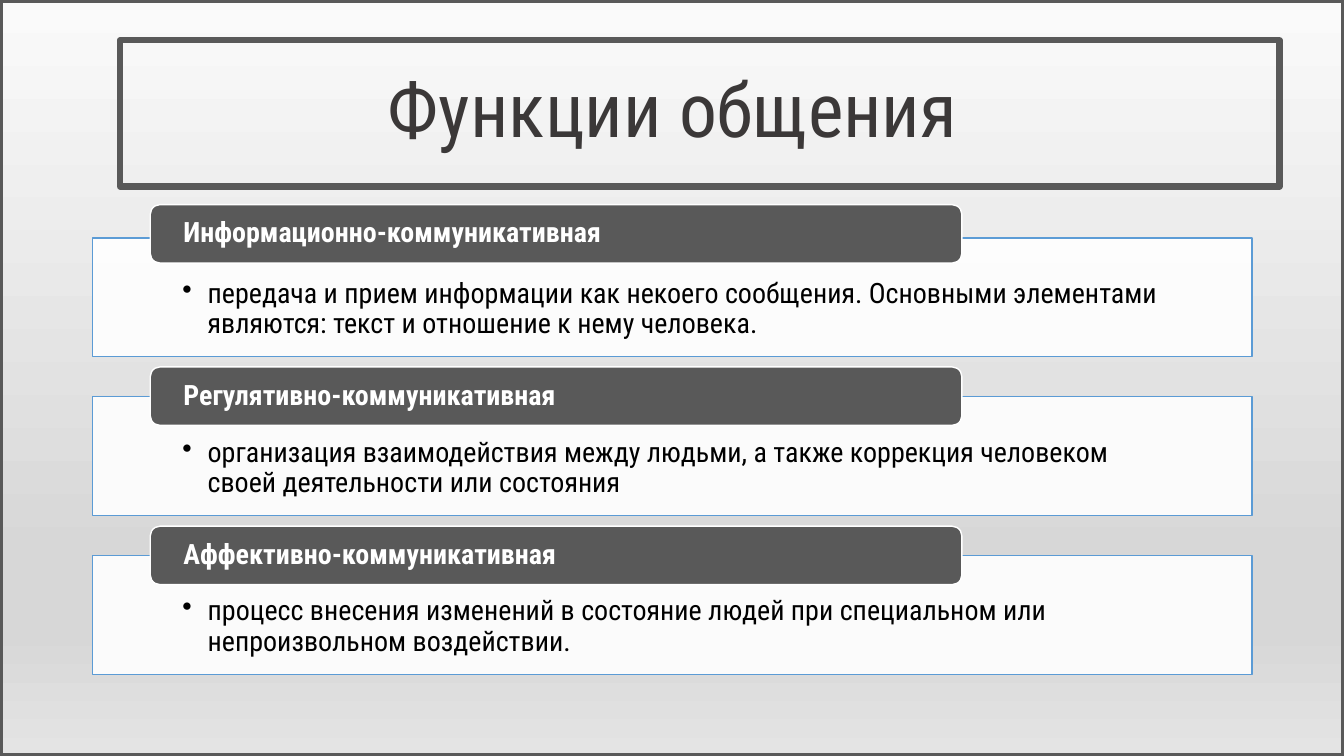
import pptx
import pptx.util
import pptx.dml.color
import pptx.enum.shapes
import pptx.enum.text
import pptx.oxml.ns
import lxml.etree

TITLE = "Функции общения"
FUNCTIONS = [
    (2.03, "Информационно-коммуникативная",
     "передача и прием информации как некоего сообщения. Основными элементами "
     "являются: текст и отношение к нему человека."),
    (3.64, "Регулятивно-коммуникативная",
     "организация взаимодействия между людьми, а также коррекция человеком "
     "своей деятельности или состояния"),
    (5.22, "Аффективно-коммуникативная",
     "процесс внесения изменений в состояние людей при специальном или "
     "непроизвольном воздействии."),
]
BACKGROUND_STOPS = [(0, "FAFAFA"), (74, "D7D7D7"), (83, "D7D7D7"), (100, "E4E4E4")]
FONT = "Roboto Condensed"
GREY, WHITE, BLUE, BLACK, TITLE_COLOR = "595959", "FFFFFF", "5B9BD5", "000000", "3B3838"
SLIDE_WIDTH, SLIDE_HEIGHT = 13.33, 7.5
PANEL_LEFT, PANEL_WIDTH, PANEL_HEIGHT = 0.92, 11.5, 1.18
FIRST_PANEL_TOP, LAST_PANEL_TOP = 2.36, 5.51
LABEL_LEFT, LABEL_WIDTH, LABEL_HEIGHT = 1.49, 8.05, 0.58
TITLE_TOP, TITLE_HEIGHT = 0.4, 1.45

Inches = pptx.util.Inches
SHAPE = pptx.enum.shapes.MSO_SHAPE
ANCHOR = pptx.enum.text.MSO_ANCHOR
ALIGN = pptx.enum.text.PP_ALIGN
qn = pptx.oxml.ns.qn


def color(value):
    return pptx.dml.color.RGBColor.from_string(value)


def add_box(page, kind, place, fill, line, weight):
    box = page.shapes.add_shape(kind, *map(Inches, place))
    box.shadow.inherit = False
    if fill:
        box.fill.solid()
        box.fill.fore_color.rgb = color(fill)
    else:
        box.fill.background()
    box.line.color.rgb = color(line)
    box.line.width = pptx.util.Pt(weight)
    return box


def write(box, text, size, ink, align, anchor, insets, bold=False, bullet=False):
    frame = box.text_frame
    frame.word_wrap = True
    frame.auto_size = pptx.enum.text.MSO_AUTO_SIZE.NONE
    frame.vertical_anchor = anchor
    (frame.margin_left, frame.margin_top,
     frame.margin_right, frame.margin_bottom) = map(Inches, insets)
    para = frame.paragraphs[0]
    if bullet:
        properties = para._p.get_or_add_pPr()
        properties.set("marL", str(Inches(0.25)))
        properties.set("indent", str(-Inches(0.25)))
        lxml.etree.SubElement(properties, qn("a:buChar"), char="•")
    para.alignment = align
    para.line_spacing = 0.9
    span = para.add_run()
    span.text = text
    span.font.name = FONT
    span.font.size = pptx.util.Pt(size)
    span.font.bold = bold
    span.font.color.rgb = color(ink)


def paint_background(page):
    fill = page.background.fill
    fill.gradient()
    fill.gradient_angle = 270
    stops = page.element.find(".//" + qn("a:gsLst"))
    for stop in list(stops):
        stops.remove(stop)
    for percent, shade in BACKGROUND_STOPS:
        stop = lxml.etree.SubElement(stops, qn("a:gs"), pos=str(percent * 1000))
        lxml.etree.SubElement(stop, qn("a:srgbClr"), val=shade)


def add_function(page, panel_top, label_top, name, description):
    panel = add_box(page, SHAPE.RECTANGLE,
                    (PANEL_LEFT, panel_top, PANEL_WIDTH, PANEL_HEIGHT), WHITE, BLUE, 1)
    shade = panel.fill._xPr.find(qn("a:solidFill"))[0]
    lxml.etree.SubElement(shade, qn("a:alpha"), val="90000")
    write(panel, description, 20, BLACK, ALIGN.LEFT, ANCHOR.TOP,
          (0.89, 0.41, 0.89, 0.16), bullet=True)
    label = add_box(page, SHAPE.ROUNDED_RECTANGLE,
                    (LABEL_LEFT, label_top, LABEL_WIDTH, LABEL_HEIGHT), GREY, WHITE, 1)
    write(label, name, 20, WHITE, ALIGN.LEFT, ANCHOR.MIDDLE, (0.3, 0, 0.3, 0), bold=True)


def main():
    deck = pptx.Presentation()
    deck.slide_width, deck.slide_height = Inches(SLIDE_WIDTH), Inches(SLIDE_HEIGHT)
    page = deck.slides.add_slide(deck.slide_layouts[5])
    paint_background(page)

    title = page.shapes.title
    title.left, title.top = Inches(PANEL_LEFT), Inches(TITLE_TOP)
    title.width, title.height = Inches(PANEL_WIDTH), Inches(TITLE_HEIGHT)
    write(title, TITLE, 54, TITLE_COLOR, ALIGN.CENTER, ANCHOR.MIDDLE, (0.1, 0.05, 0.1, 0.05))

    add_box(page, SHAPE.RECTANGLE, (1.19, TITLE_TOP, PANEL_WIDTH, TITLE_HEIGHT), None, GREY, 4.5)
    add_box(page, SHAPE.RECTANGLE, (0, 0, SLIDE_WIDTH, SLIDE_HEIGHT), None, GREY, 4.5)

    step = (LAST_PANEL_TOP - FIRST_PANEL_TOP) / (len(FUNCTIONS) - 1)
    for index, (label_top, name, description) in enumerate(FUNCTIONS):
        add_function(page, FIRST_PANEL_TOP + index * step, label_top, name, description)

    deck.save("out.pptx")


if __name__ == "__main__":
    main()
